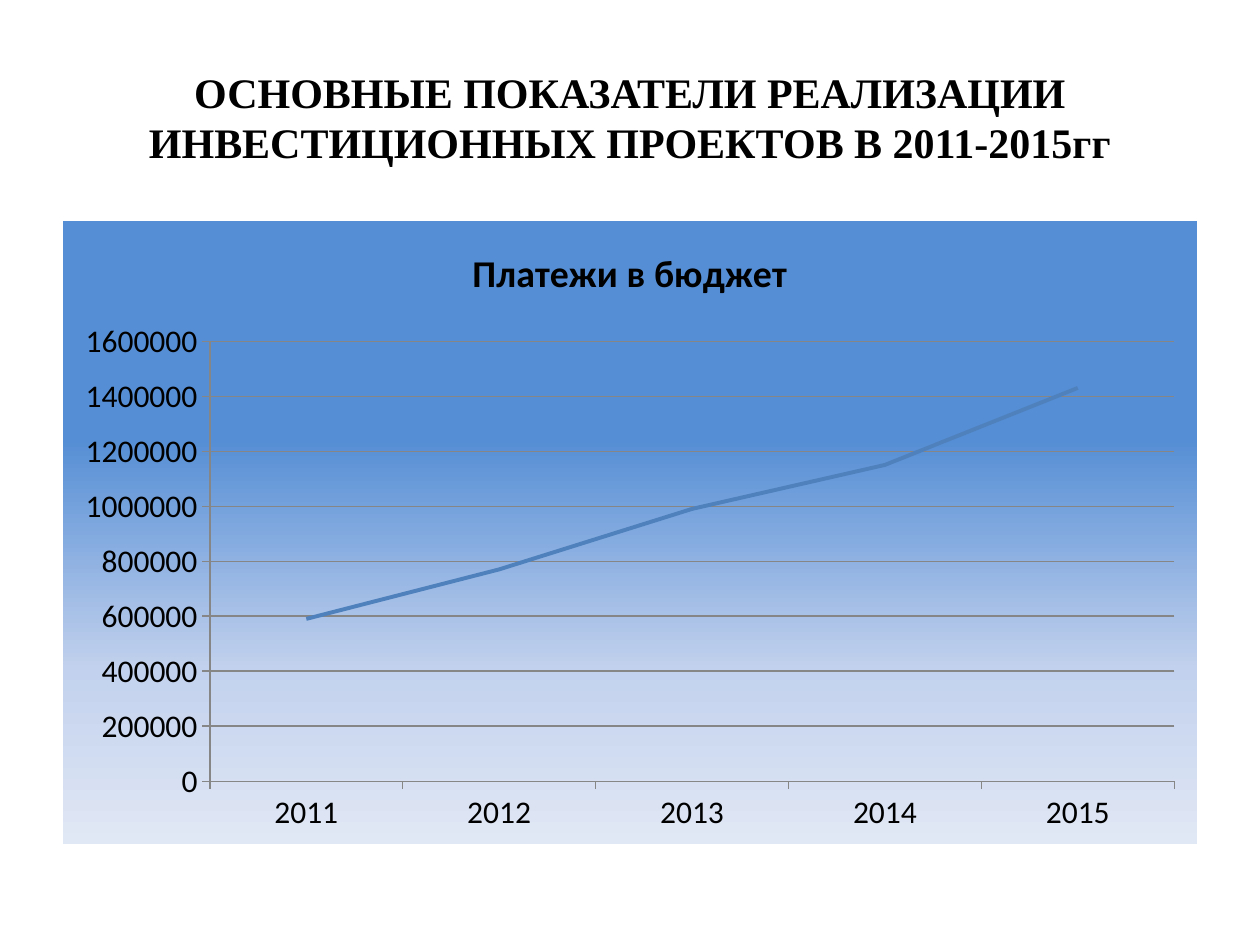
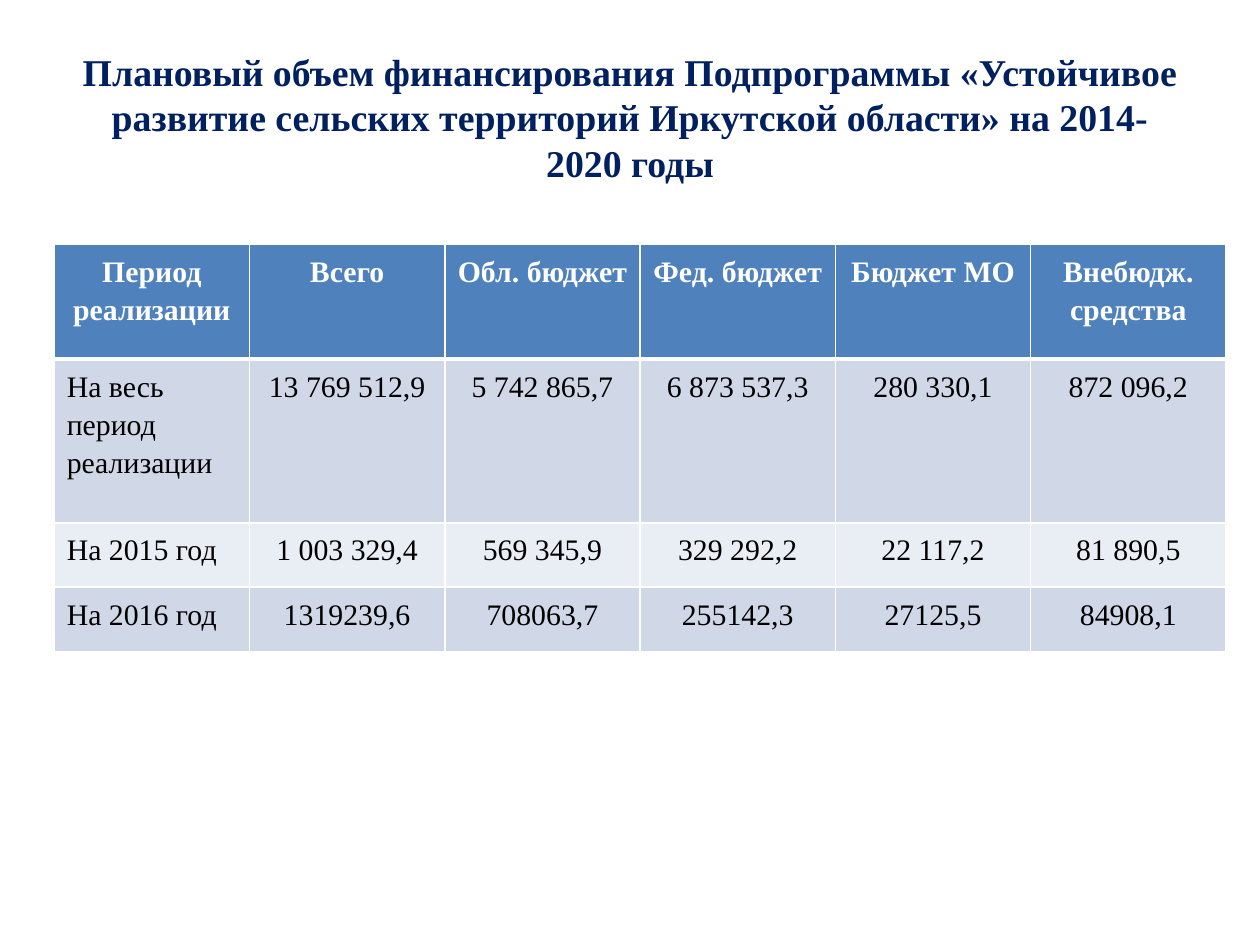
from dataclasses import dataclass

from lxml import etree
from pptx import Presentation
from pptx.chart.data import CategoryChartData
from pptx.dml.color import RGBColor
from pptx.enum.chart import XL_CHART_TYPE, XL_TICK_MARK
from pptx.enum.text import MSO_ANCHOR, PP_ALIGN
from pptx.oxml import parse_xml
from pptx.oxml.ns import nsdecls, qn
from pptx.util import Inches, Pt

LINE = XL_CHART_TYPE.LINE
OUT = XL_TICK_MARK.OUTSIDE
MIDDLE = MSO_ANCHOR.MIDDLE
LEFT, CENTER = PP_ALIGN.LEFT, PP_ALIGN.CENTER

SERIF, SANS = "Times New Roman", "Calibri"
COLORS = {
    "black": "000000", "navy": "002060", "white": "FFFFFF",
    "blue": "4F81BD", "grid": "868686",
    "band": "D0D8E8", "pale": "E9EDF4",
}
# Chart background, top to bottom: percent and colour
STOPS = [(0, "558ED5"), (35, "558ED5"), (72, "C2D1ED"), (100, "E1E8F5")]

PAYMENTS = {"2011": 590000, "2012": 770000, "2013": 990000,
            "2014": 1150000, "2015": 1430000}
FUNDING = [
    ["Период реализации", "Всего", "Обл. бюджет", "Фед. бюджет",
     "Бюджет МО", "Внебюдж. средства"],
    ["На весь период реализации", "13 769 512,9", "5 742 865,7",
     "6 873 537,3", "280 330,1", "872 096,2"],
    ["На 2015 год", "1 003 329,4", "569 345,9", "329 292,2",
     "22 117,2", "81 890,5"],
    ["На 2016 год", "1319239,6", "708063,7", "255142,3",
     "27125,5", "84908,1"],
]
HEIGHTS = [0.91, 1.3, 0.51, 0.51]
WIDTH = 1.55


@dataclass
class Title:
    text: str
    size: float
    color: str


def paint(font, name: str, size: float, color: str, bold: bool) -> None:
    font.name = name
    font.size = Pt(size)
    font.bold = bold
    font.color.rgb = RGBColor.from_string(COLORS[color])


def add_title(slide, title: Title) -> None:
    box = slide.shapes.add_textbox(Inches(0.5), Inches(0.3),
                                   Inches(9), Inches(1.25))
    frame = box.text_frame
    frame.word_wrap = True
    frame.vertical_anchor = MIDDLE
    frame.text = title.text
    para = frame.paragraphs[0]
    para.alignment = CENTER
    paint(para.runs[0].font, SERIF, title.size, title.color, True)


def style_line(line, color: str, width: float) -> None:
    line.color.rgb = RGBColor.from_string(COLORS[color])
    line.width = Pt(width)


def fill_chart(chart) -> None:
    stops = "".join(
        f'<a:gs pos="{pos * 1000}"><a:srgbClr val="{color}"/></a:gs>'
        for pos, color in STOPS)
    back = parse_xml(
        f'<c:spPr {nsdecls("c", "a")}><a:gradFill><a:gsLst>{stops}</a:gsLst>'
        '<a:lin ang="5400000" scaled="0"/></a:gradFill>'
        '<a:ln><a:noFill/></a:ln></c:spPr>')
    chart.element.find(qn("c:chart")).addnext(back)


def add_payments(slide) -> None:
    name = "Платежи в бюджет"
    data = CategoryChartData()
    data.categories = list(PAYMENTS)
    data.add_series(name, list(PAYMENTS.values()))
    chart = slide.shapes.add_chart(LINE, Inches(0.5), Inches(1.75),
                                   Inches(9), Inches(4.95), data).chart
    paint(chart.font, SANS, 18, "black", False)
    fill_chart(chart)
    chart.has_legend = False
    chart.has_title = True
    head = chart.chart_title.text_frame
    head.text = name
    paint(head.paragraphs[0].runs[0].font, SANS, 21.6, "black", True)

    # Axes and grid
    for axis in (chart.category_axis, chart.value_axis):
        axis.major_tick_mark = OUT
        style_line(axis.format.line, "grid", 0.75)
    scale = chart.value_axis
    scale.has_major_gridlines = True
    style_line(scale.major_gridlines.format.line, "grid", 0.75)
    scale.minimum_scale, scale.maximum_scale = 0, 1600000
    scale.major_unit = 200000

    # Payment line
    plot = chart.plots[0]
    plot.vary_by_categories = False
    series = plot.series[0]
    series.smooth = False
    style_line(series.format.line, "blue", 2.25)


def add_edges(cell, top: int, base: int) -> None:
    props = cell._tc.get_or_add_tcPr()
    edges = {"lnL": 1, "lnR": 1, "lnT": top, "lnB": base}
    for spot, (tag, width) in enumerate(edges.items()):
        edge = etree.Element(qn(f"a:{tag}"), w=str(Pt(width)))
        fill = etree.SubElement(edge, qn("a:solidFill"))
        etree.SubElement(fill, qn("a:srgbClr"), val=COLORS["white"])
        props.insert(spot, edge)


def add_funding(slide) -> None:
    rows, cols = len(FUNDING), len(FUNDING[0])
    table = slide.shapes.add_table(
        rows, cols, Inches(0.43), Inches(1.94),
        Inches(WIDTH * cols), Inches(sum(HEIGHTS))).table
    for col in table.columns:
        col.width = Inches(WIDTH)
    for r, texts in enumerate(FUNDING):
        table.rows[r].height = Inches(HEIGHTS[r])
        head = r == 0
        fill = "blue" if head else "band" if r % 2 else "pale"
        for c, text in enumerate(texts):
            cell = table.cell(r, c)
            cell.fill.solid()
            cell.fill.fore_color.rgb = RGBColor.from_string(COLORS[fill])
            add_edges(cell, 3 if r == 1 else 1, 3 if head else 1)
            cell.text_frame.text = text
            para = cell.text_frame.paragraphs[0]
            para.alignment = CENTER if head or c else LEFT
            para.line_spacing = 1.15
            paint(para.runs[0].font, SERIF, 17,
                  "white" if head else "black", head)


def main() -> None:
    deck = Presentation()
    deck.slide_width, deck.slide_height = Inches(10), Inches(7.5)
    pages = [
        (Title("ОСНОВНЫЕ ПОКАЗАТЕЛИ РЕАЛИЗАЦИИ ИНВЕСТИЦИОННЫХ ПРОЕКТОВ "
               "В 2011-2015гг", 24, "black"), add_payments),
        (Title("Плановый объем финансирования Подпрограммы «Устойчивое "
               "развитие сельских территорий Иркутской области» на "
               "2014-2020 годы", 21.6, "navy"), add_funding),
    ]
    for title, draw in pages:
        slide = deck.slides.add_slide(deck.slide_layouts[6])
        add_title(slide, title)
        draw(slide)
    deck.save("out.pptx")


if __name__ == "__main__":
    main()
